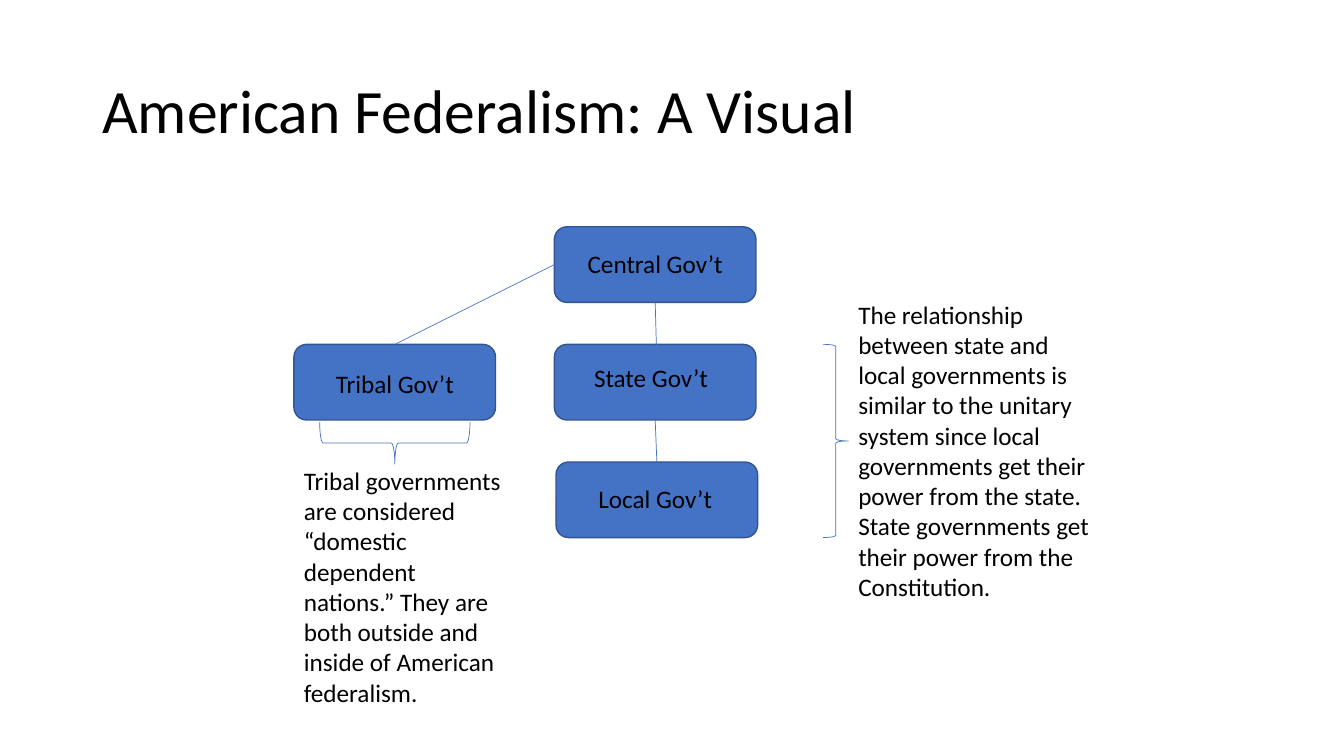
from pptx import Presentation
from pptx.dml.color import RGBColor
from pptx.enum.shapes import MSO_CONNECTOR, MSO_SHAPE
from pptx.enum.text import MSO_ANCHOR, PP_ALIGN
from pptx.oxml.ns import qn
from pptx.util import Inches, Pt

LINE = MSO_CONNECTOR.STRAIGHT
ROUND, BRACE = MSO_SHAPE.ROUNDED_RECTANGLE, MSO_SHAPE.RIGHT_BRACE
LEFT, MID = PP_ALIGN.LEFT, PP_ALIGN.CENTER
TOP, LEVEL = MSO_ANCHOR.TOP, MSO_ANCHOR.MIDDLE
COLORS = {name: RGBColor.from_string(code) for name, code in
          {"text": "000000", "blue": "4472C4", "edge": "325491"}.items()}

COLS, ROWS = 160, 90  # twelve grid cells to the inch
prs = Presentation()
prs.slide_width, prs.slide_height = Inches(COLS / 12), Inches(ROWS / 12)
slide = prs.slides.add_slide(prs.slide_layouts[6])
shapes = slide.shapes


def grid(*cells):
    """Turn grid cells into slide lengths."""
    return [Inches(cell / 12) for cell in cells]


def write(text, area, size=18, align=LEFT, anchor=TOP):
    frame = shapes.add_textbox(*grid(*area)).text_frame
    frame.word_wrap = True
    frame.vertical_anchor = anchor
    para = frame.paragraphs[0]
    para.text = text
    para.alignment = align
    para.font.name, para.font.size = "Calibri", Pt(size)
    para.font.color.rgb = COLORS["text"]
    return para


title = write("American Federalism: A Visual", (11, 4.8, 138, 17.4), 44, anchor=LEVEL)
title.line_spacing = 0.9

# Levels of government: box corner, then label area
levels = {
    "Central": (66, 27, (66, 29, 24, 5)),
    "State": (66, 41, (68, 42.6, 19, 5)),
    "Local": (66.2, 55, (68, 57, 20, 5)),
    "Tribal": (35, 41, (37, 43.2, 20, 5)),
}
boxes = {}
for name, (left, top, area) in levels.items():
    box = shapes.add_shape(ROUND, *grid(left, top, 24, 9))
    box.shadow.inherit = False
    box.fill.solid()
    box.fill.fore_color.rgb = COLORS["blue"]
    box.line.color.rgb = COLORS["edge"]
    box.line.width = Pt(1)
    boxes[name] = box
    write(f"{name} Gov’t", area, align=MID)

# Links: start box and side, end point, end box (None where the end lies inside a box)
links = [
    ("Central", 2, (78.2, 43.2), None),
    ("State", 2, (78.2, 55), "Local"),
    ("Central", 1, (47, 41), "Tribal"),
]
for start, side, end, goal in links:
    link = shapes.add_connector(LINE, 0, 0, *grid(*end))
    link.begin_connect(boxes[start], side)
    if goal:
        link.end_connect(boxes[goal], 0)
    link.line.color.rgb = COLORS["blue"]
    link.line.width = Pt(0.5)
    link._element.spPr.append(link._element.makeelement(qn("a:effectLst"), {}))

# Braces with their notes: brace area, turn, note area, note
notes = [
    ((98, 41, 3, 23), 0, (101, 35, 30, 37.6),
     "The relationship between state and local governments is similar to the "
     "unitary system since local governments get their power from the state. "
     "State governments get their power from the Constitution."),
    ((44.5, 43.8, 5, 17.9), 90, (35, 54.8, 27, 30.2),
     "Tribal governments are considered “domestic dependent nations.” "
     "They are both outside and inside of American federalism."),
]
for spot, turn, area, note in notes:
    brace = shapes.add_shape(BRACE, *grid(*spot))
    brace.shadow.inherit = False
    brace.rotation = turn
    brace.fill.background()
    brace.line.color.rgb = COLORS["blue"]
    brace.line.width = Pt(0.5)
    write(note, area)

prs.save("out.pptx")
